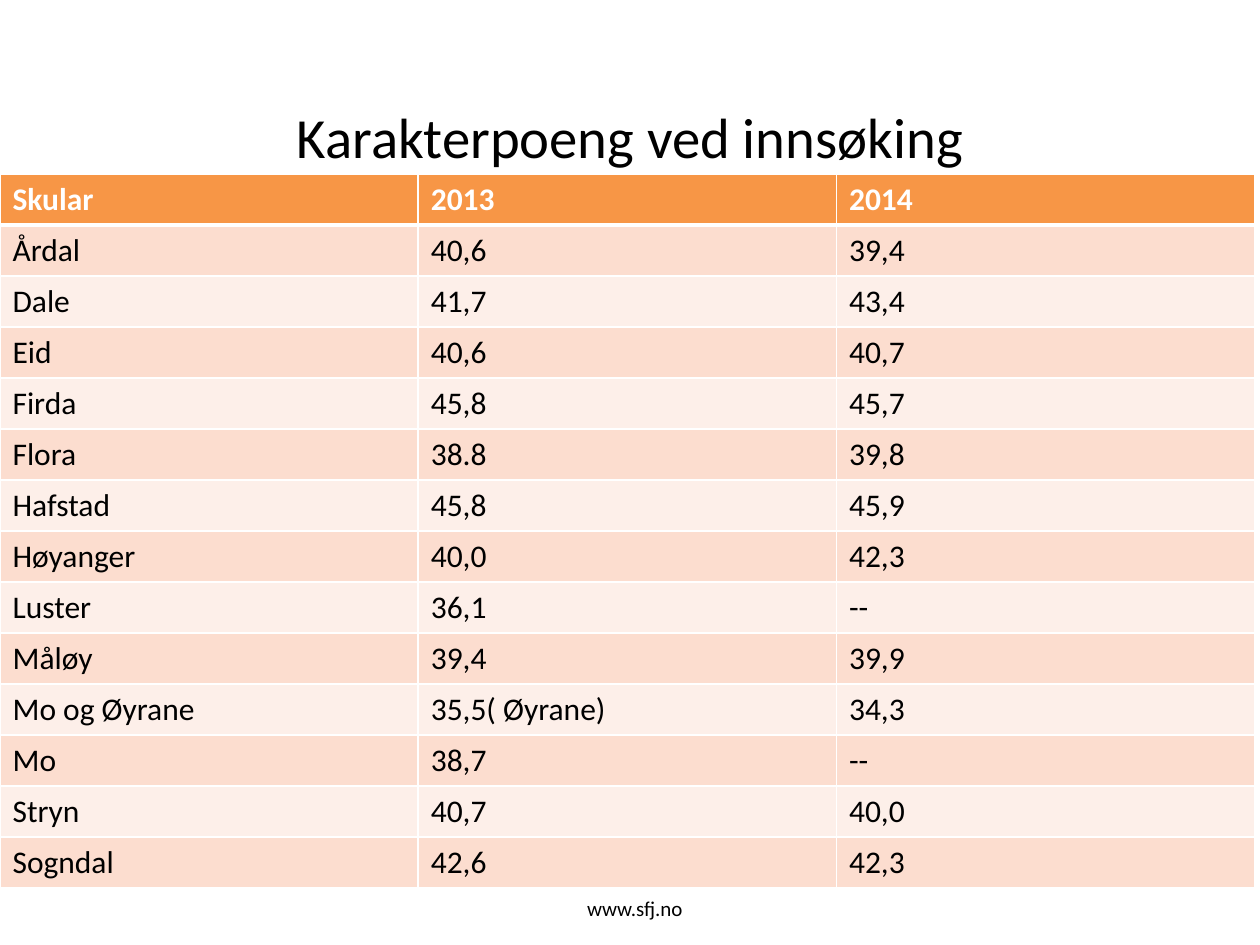
from lxml.etree import SubElement as Sub
from pptx import Presentation
from pptx.dml.color import RGBColor as RGB
from pptx.enum.text import MSO_ANCHOR as Anchor, PP_ALIGN as Align
from pptx.oxml.ns import qn
from pptx.util import Pt

HUES = {"head": "F79646", "dark": "FCDDCF", "light": "FDEFE9",
        "text": "000000", "white": "FFFFFF"}
ROWS = [
    ("Skular", "2013", "2014"),
    ("Årdal", "40,6", "39,4"),
    ("Dale", "41,7", "43,4"),
    ("Eid", "40,6", "40,7"),
    ("Firda", "45,8", "45,7"),
    ("Flora", "38.8", "39,8"),
    ("Hafstad", "45,8", "45,9"),
    ("Høyanger", "40,0", "42,3"),
    ("Luster", "36,1", "--"),
    ("Måløy", "39,4", "39,9"),
    ("Mo og Øyrane", "35,5( Øyrane)", "34,3"),
    ("Mo", "38,7", "--"),
    ("Stryn", "40,7", "40,0"),
    ("Sogndal", "42,6", "42,3"),
]


def write(frame, text, size, hue="text", align=Align.LEFT, bold=False):
    frame.text = text
    para = frame.paragraphs[0]
    para.alignment = align
    font = para.runs[0].font
    font.name, font.size, font.bold = "Calibri", Pt(size), bold
    font.color.rgb = RGB.from_string(HUES[hue])


def edge(cell, side, width):
    line = Sub(cell._tc.get_or_add_tcPr(), qn(f"a:ln{side}"), w=str(Pt(width)))
    fill = Sub(line, qn("a:solidFill"))
    Sub(fill, qn("a:srgbClr"), val=HUES["white"])


deck = Presentation()
deck.slide_width, deck.slide_height = Pt(720), Pt(540)
slide = deck.slides.add_slide(deck.slide_layouts[5])

# Title
title = slide.shapes.title
title.left, title.top, title.width, title.height = Pt(36), Pt(54.7), Pt(648), Pt(45.4)
title.text_frame.vertical_anchor = Anchor.MIDDLE
write(title.text_frame, "Karakterpoeng ved innsøking", 32.4, align=Align.CENTER)

# Footer
foot = slide.shapes.add_textbox(Pt(190), Pt(508.5), Pt(345.6), Pt(21))
foot.text_frame.word_wrap = True
foot.text_frame.vertical_anchor = Anchor.MIDDLE
write(foot.text_frame, "www.sfj.no", 12, align=Align.CENTER)

# Table of schools
high = 29.16
table = slide.shapes.add_table(len(ROWS), 3, Pt(0), Pt(99.4),
                               Pt(717), Pt(high * len(ROWS))).table
for col in table.columns:
    col.width = Pt(239)
for r, row in enumerate(ROWS):
    table.rows[r].height = Pt(high)
    head = r == 0
    band = "head" if head else "dark" if r % 2 else "light"
    for c, text in enumerate(row):
        cell = table.cell(r, c)
        write(cell.text_frame, text, 18, "white" if head else "text", bold=head)
        for side in "LRTB":
            thick = (side == "B" and head) or (side == "T" and r == 1)
            edge(cell, side, 3 if thick else 1)
        cell.fill.solid()
        cell.fill.fore_color.rgb = RGB.from_string(HUES[band])

deck.save("out.pptx")
